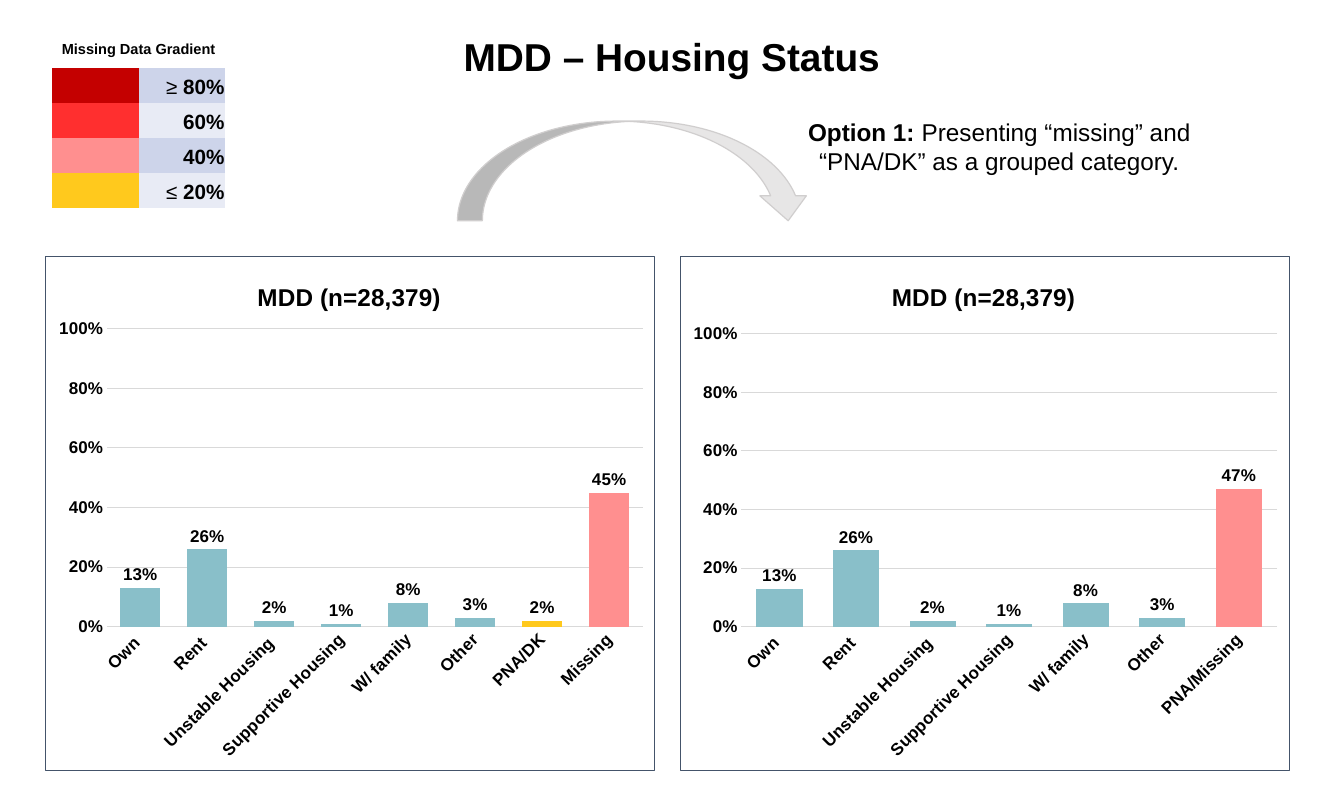
from lxml import etree
from pptx import Presentation
from pptx.chart.data import CategoryChartData
from pptx.dml.color import RGBColor
from pptx.enum.chart import XL_CHART_TYPE as ChartType, XL_LABEL_POSITION as LabelPosition
from pptx.enum.chart import XL_TICK_MARK as TickMark
from pptx.enum.shapes import MSO_SHAPE as Shape
from pptx.enum.text import MSO_ANCHOR as Anchor, PP_ALIGN as Align
from pptx.oxml import parse_xml
from pptx.oxml.ns import nsdecls, qn
from pptx.util import Inches, Pt

BLACK = RGBColor(0x00, 0x00, 0x00)
TEAL = RGBColor(0x89, 0xBF, 0xC9)
DARK_RED = RGBColor(0xC4, 0x00, 0x00)
RED = RGBColor(0xFF, 0x2F, 0x2F)
PINK = RGBColor(0xFF, 0x8F, 0x8F)
YELLOW = RGBColor(0xFF, 0xC9, 0x1D)
BAND_DARK = RGBColor(0xCD, 0xD4, 0xEA)
BAND_LIGHT = RGBColor(0xE8, 0xEB, 0xF5)
ARROW_FILL = RGBColor(0xE7, 0xE6, 0xE6)
ARROW_LINE = RGBColor(0xD0, 0xCE, 0xCE)
GRID = RGBColor(0xD9, 0xD9, 0xD9)
FRAME = RGBColor(0x44, 0x54, 0x6A)
FONT = "Arial"

HEADING = "MDD – Housing Status"
OPTION = [("Option 1: ", True),
          ("Presenting “missing” and “PNA/DK” as a grouped category.", False)]
GRADIENT_HEADING = "Missing Data Gradient"
GRADIENT = [(DARK_RED, "≥ ", "80%"), (RED, "", "60%"), (PINK, "", "40%"), (YELLOW, "≤ ", "20%")]
CHART_TITLE = "MDD (n=28,379)"
SHARED_BARS = [("Own ", 0.13), ("Rent ", 0.26), ("Unstable Housing ", 0.02),
               ("Supportive Housing", 0.01), ("W/ family", 0.08), ("Other", 0.03)]
CHARTS = [
    {"left": 0.52, "bars": SHARED_BARS + [("PNA/DK", 0.02), ("Missing", 0.45)],
     "highlights": {"PNA/DK": YELLOW, "Missing": PINK},
     "title_at": (0.34, 0.04), "plot_at": (0.1, 0.14, 0.88, 0.58)},
    {"left": 7.78, "bars": SHARED_BARS + [("PNA/Missing", 0.47)],
     "highlights": {"PNA/Missing": PINK},
     "title_at": (0.34, 0.04), "plot_at": (0.1, 0.15, 0.88, 0.57)},
]
CHART_TOP, CHART_WIDTH, CHART_HEIGHT = 2.93, 6.98, 5.89


def style(font, size, bold=True):
    font.name, font.size, font.bold = FONT, Pt(size), bold
    font.color.rgb = BLACK


def write(paragraph, pieces, size, align):
    paragraph.alignment = align
    for text, bold in pieces:
        run = paragraph.add_run()
        run.text = text
        style(run.font, size, bold)


def add_note(slide, box, pieces, size, align):
    frame = slide.shapes.add_textbox(*map(Inches, box)).text_frame
    frame.word_wrap = True
    write(frame.paragraphs[0], pieces, size, align)


def add_arrow(slide):
    arrow = slide.shapes.add_shape(Shape.CURVED_LEFT_ARROW, *map(Inches, (6.69, -0.07, 1.14, 4.05)))
    arrow.rotation = 270
    arrow.adjustments[1] = 0.466
    arrow.shadow.inherit = False
    arrow.fill.solid()
    arrow.fill.fore_color.rgb = ARROW_FILL
    arrow.line.color.rgb = ARROW_LINE
    arrow.line.width = Pt(1)


def add_gradient(slide):
    frame = slide.shapes.add_table(len(GRADIENT), 2, *map(Inches, (0.6, 0.78, 1.98, 1.48)))
    table = frame.table
    table.first_row = table.horz_banding = False
    for style_id in frame.element.iter(qn("a:tableStyleId")):
        style_id.text = "{2D5ABB26-0587-4C30-8999-92F81FD0307C}"
    for row, (shade, sign, percent) in enumerate(GRADIENT):
        swatch, label = table.cell(row, 0), table.cell(row, 1)
        for cell, colour in ((swatch, shade), (label, BAND_LIGHT if row % 2 else BAND_DARK)):
            cell.fill.solid()
            cell.fill.fore_color.rgb = colour
        label.vertical_anchor = Anchor.BOTTOM
        label.margin_left = label.margin_top = label.margin_right = Inches(0.01)
        pieces = [(sign, False), (percent, True)] if sign else [(percent, True)]
        write(label.text_frame.paragraphs[0], pieces, 17, Align.RIGHT)


def place(part, index, sizes, inner=False):
    for old in part.findall(qn("c:layout")):
        part.remove(old)
    layout = etree.Element(qn("c:layout"))
    manual = etree.SubElement(layout, qn("c:manualLayout"))
    settings = [("layoutTarget", "inner")] if inner else []
    settings += [("xMode", "edge"), ("yMode", "edge"), *zip("xywh", sizes)]
    for tag, value in settings:
        etree.SubElement(manual, qn(f"c:{tag}")).set("val", str(value))
    part.insert(index, layout)


def add_housing_chart(slide, left, bars, highlights, title_at, plot_at):
    data = CategoryChartData(number_format="0%")
    data.categories = [name for name, _ in bars]
    data.add_series("Series 1", [share for _, share in bars])
    box = map(Inches, (left, CHART_TOP, CHART_WIDTH, CHART_HEIGHT))
    chart = slide.shapes.add_chart(ChartType.COLUMN_CLUSTERED, *box, data).chart
    style(chart.font, 10, False)
    chart.has_legend = False
    chart.has_title = True
    heading = chart.chart_title.text_frame
    heading.text = CHART_TITLE
    style(heading.paragraphs[0].runs[0].font, 20)

    categories, shares = chart.category_axis, chart.value_axis
    for axis in (categories, shares):
        axis.major_tick_mark = axis.minor_tick_mark = TickMark.NONE
        style(axis.tick_labels.font, 14)
    shares.minimum_scale, shares.maximum_scale, shares.major_unit = 0, 1, 0.2
    shares.tick_labels.number_format = "0%"
    shares.tick_labels.number_format_is_linked = False
    shares.format.line.fill.background()
    for line in (categories.format.line, shares.major_gridlines.format.line):
        line.color.rgb = GRID
        line.width = Pt(0.75)

    plot = chart.plots[0]
    plot.vary_by_categories = False
    plot.gap_width, plot.overlap = 66, -27
    series = plot.series[0]
    series.format.fill.solid()
    series.format.fill.fore_color.rgb = TEAL
    for index, (name, _) in enumerate(bars):
        if name in highlights:
            fill = series.points[index].format.fill
            fill.solid()
            fill.fore_color.rgb = highlights[name]
    plot.has_data_labels = True
    labels = plot.data_labels
    labels.show_value = True
    labels.position = LabelPosition.OUTSIDE_END
    labels.number_format, labels.number_format_is_linked = "0%", False
    style(labels.font, 14)

    body = chart.element.find(qn("c:chart"))
    plot_area = body.find(qn("c:plotArea"))
    place(body.find(qn("c:title")), 1, title_at)
    place(plot_area, 0, plot_at, inner=True)
    slant = plot_area.find("/".join(map(qn, ("c:catAx", "c:txPr", "a:bodyPr"))))
    slant.set("rot", "-2700000")
    slant.set("vert", "horz")
    body.addnext(parse_xml(
        f'<c:spPr {nsdecls("c", "a")}><a:noFill/><a:ln w="{Pt(0.75)}"><a:solidFill>'
        f'<a:srgbClr val="{FRAME}"/></a:solidFill></a:ln></c:spPr>'))


def main():
    """Build the housing status slide and save it."""
    deck = Presentation()
    deck.slide_width, deck.slide_height = Inches(15.38), Inches(9.15)
    slide = deck.slides.add_slide(deck.slide_layouts[5])
    title = slide.shapes.title
    title.left, title.top, title.width, title.height = map(Inches, (3.64, 0.32, 8.1, 0.64))
    title.text_frame.text = HEADING
    title.text_frame.paragraphs[0].alignment = Align.CENTER
    style(title.text_frame.paragraphs[0].runs[0].font, 32)
    add_arrow(slide)
    add_note(slide, (8.99, 1.29, 4.89, 0.77), OPTION, 20, Align.CENTER)
    add_note(slide, (0.61, 0.41, 2.27, 0.3), [(GRADIENT_HEADING, True)], 12, Align.LEFT)
    for chart in CHARTS:
        add_housing_chart(slide, **chart)
    add_gradient(slide)
    deck.save("out.pptx")


if __name__ == "__main__":
    main()
